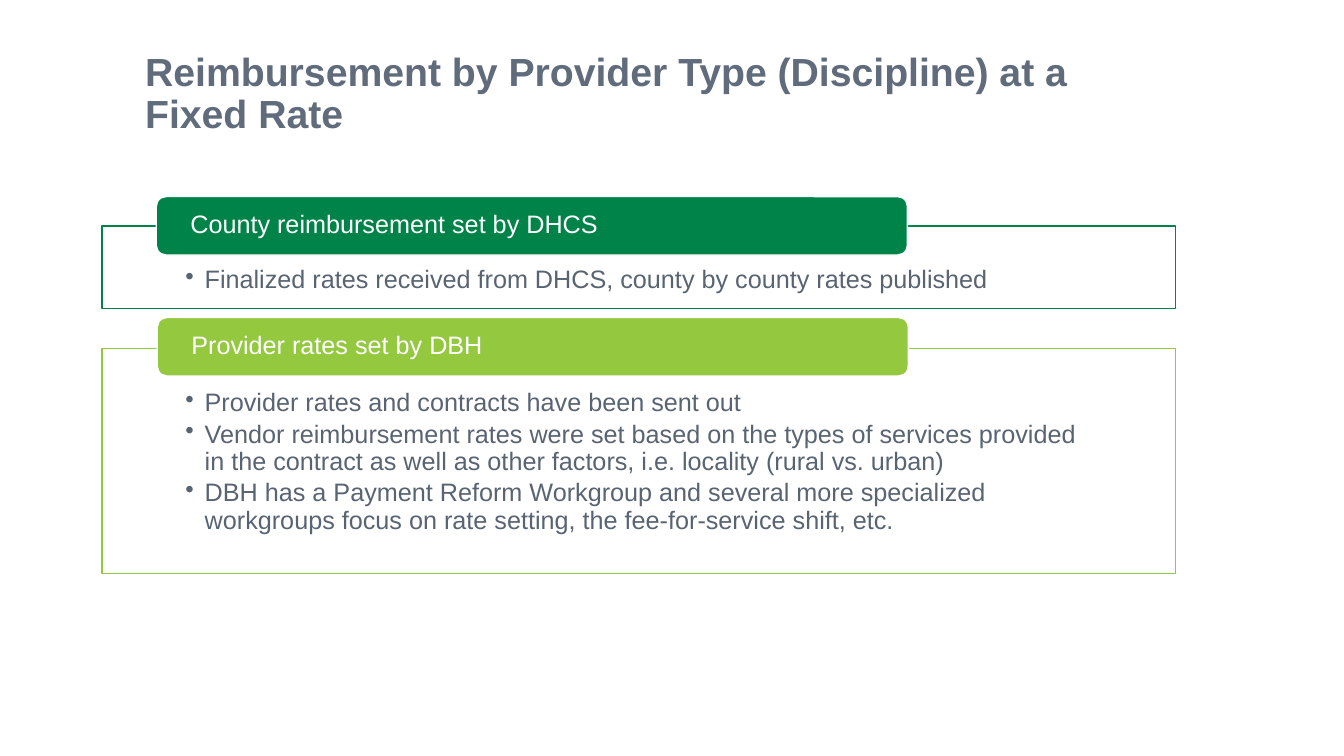
"""Build the slide on reimbursement by provider type at a fixed rate."""
from lxml import etree
from pptx import Presentation
from pptx.dml.color import RGBColor
from pptx.enum.shapes import MSO_SHAPE
from pptx.enum.text import MSO_ANCHOR, PP_ALIGN
from pptx.oxml.ns import qn
from pptx.util import Pt

RECTANGLE = MSO_SHAPE.RECTANGLE
ROUNDED = MSO_SHAPE.ROUNDED_RECTANGLE
TOP, MIDDLE, BOTTOM = MSO_ANCHOR.TOP, MSO_ANCHOR.MIDDLE, MSO_ANCHOR.BOTTOM
LEFT = PP_ALIGN.LEFT

PX = 9144
THEME = {
    "font": "Arial",
    "title": "606B7C",
    "body": "596473",
    "white": "FFFFFF",
    "county": "008348",
    "provider": "93C83F",
    "title_size": 28,
    "body_size": 18,
}
BULLET_INDENT = 19

SECTIONS = [
    ("County reimbursement set by DHCS", "county", (155, 195), (224, 82), [
        "Finalized rates received from DHCS, county by county rates published",
    ]),
    ("Provider rates set by DBH", "provider", (156, 315), (346, 223), [
        "Provider rates and contracts have been sent out",
        "Vendor reimbursement rates were set based on the types of services provided "
        "in the contract as well as other factors, i.e. locality (rural vs. urban)",
        "DBH has a Payment Reform Workgroup and several more specialized workgroups "
        "focus on rate setting, the fee-for-service shift, etc.",
    ]),
]


def write(holder, lines, size, color, anchor, insets, bold=False, bulleted=False):
    frame = holder.text_frame
    frame.word_wrap = True
    frame.vertical_anchor = anchor
    (frame.margin_left, frame.margin_top,
     frame.margin_right, frame.margin_bottom) = [inset * PX for inset in insets]
    for index, line in enumerate(lines):
        paragraph = frame.paragraphs[0] if index == 0 else frame.add_paragraph()
        paragraph.text = line
        if bulleted:
            paragraph.level = 1
            properties = paragraph._p.get_or_add_pPr()
            properties.set("marL", str(BULLET_INDENT * PX))
            properties.set("indent", str(-BULLET_INDENT * PX))
            etree.SubElement(properties, qn("a:buChar"), char="•")
            paragraph.space_after = Pt(3)
        paragraph.alignment = LEFT
        paragraph.line_spacing = 0.9
        paragraph.font.name = THEME["font"]
        paragraph.font.size = Pt(THEME[size])
        paragraph.font.bold = bold
        paragraph.font.color.rgb = RGBColor.from_string(THEME[color])


def add_panel(preset, box, fill, line):
    panel = slide.shapes.add_shape(preset, *[length * PX for length in box])
    panel.shadow.inherit = False
    panel.fill.solid()
    panel.fill.fore_color.rgb = RGBColor.from_string(THEME[fill])
    panel.line.color.rgb = RGBColor.from_string(THEME[line])
    panel.line.width = Pt(1)
    return panel


deck = Presentation()
deck.slide_width, deck.slide_height = 1333 * PX, 750 * PX
slide = deck.slides.add_slide(deck.slide_layouts[6])

title = slide.shapes.add_textbox(144 * PX, 50 * PX, 933 * PX, 86 * PX)
write(title, ["Reimbursement by Provider Type (Discipline) at a Fixed Rate"],
      "title_size", "title", BOTTOM, (0, 0, 0, 0), bold=True)

for heading, accent, (tab_left, tab_top), (top, height), points in SECTIONS:
    details = add_panel(RECTANGLE, (101, top, 1065, height), "white", accent)
    write(details, points, "body_size", "body", TOP, (83, 41, 83, 14), bulleted=True)
    tab = add_panel(ROUNDED, (tab_left, tab_top, 745, 58), accent, "white")
    write(tab, [heading], "body_size", "white", MIDDLE, (31, 0, 31, 0))

deck.save("out.pptx")
